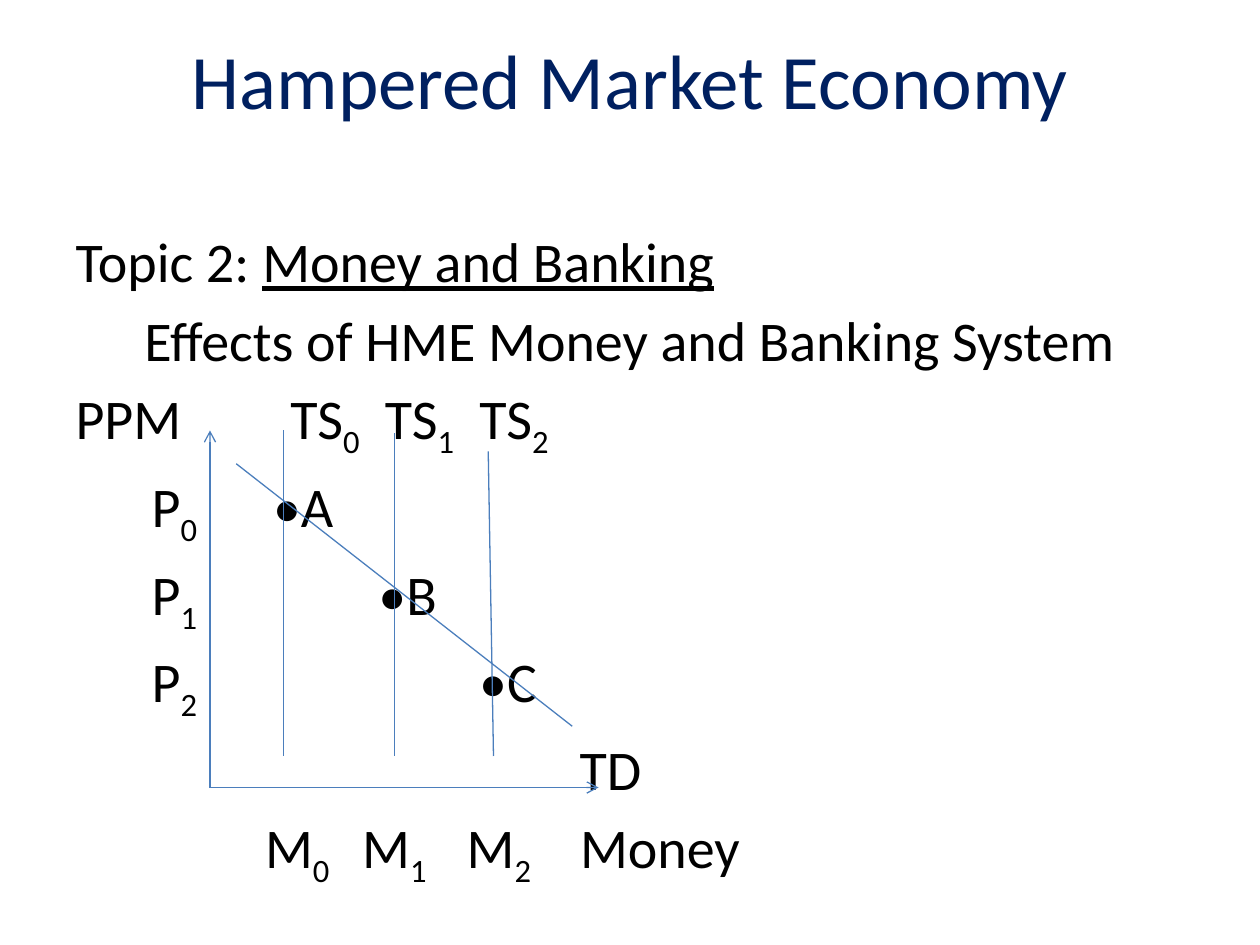
from dataclasses import dataclass

from lxml import etree
from pptx import Presentation
from pptx.dml.color import RGBColor
from pptx.enum.shapes import MSO_CONNECTOR
from pptx.enum.text import MSO_ANCHOR, MSO_AUTO_SIZE, PP_ALIGN
from pptx.oxml.ns import qn
from pptx.util import Pt

STRAIGHT = MSO_CONNECTOR.STRAIGHT
CENTER, LEFT = PP_ALIGN.CENTER, PP_ALIGN.LEFT
TOP, MIDDLE = MSO_ANCHOR.TOP, MSO_ANCHOR.MIDDLE
NO_AUTOFIT = MSO_AUTO_SIZE.NONE


@dataclass(frozen=True)
class Theme:
    font: str = "Calibri"
    title_size: float = 44
    body_size: float = 32
    space_width: float = 7.2
    line_width: float = 0.75
    title: RGBColor = RGBColor(0x00, 0x20, 0x60)
    text: RGBColor = RGBColor(0x00, 0x00, 0x00)
    line: RGBColor = RGBColor(0x4B, 0x7E, 0xBC)


theme = Theme()


def add_run(p, text, size=theme.body_size, color=theme.text):
    r = p.add_run()
    r.text = text
    r.font.name, r.font.size, r.font.color.rgb = theme.font, Pt(size), color
    return r


def add_line(s, x1, y1, x2, y2, arrow):
    c = s.shapes.add_connector(STRAIGHT, Pt(x1), Pt(y1), Pt(x2), Pt(y2))
    c.line.color.rgb = theme.line
    c.line.width = Pt(theme.line_width)
    if arrow:
        etree.SubElement(c.line._get_or_add_ln(), qn("a:tailEnd"), type="arrow")
    etree.SubElement(c._element.spPr, qn("a:effectLst"))


prs = Presentation()
prs.slide_width, prs.slide_height = Pt(720), Pt(540)
s = prs.slides.add_slide(prs.slide_layouts[1])

title = s.shapes.title
title.left, title.top, title.width, title.height = Pt(0), Pt(0), Pt(720), Pt(90)
title.text_frame.vertical_anchor = MIDDLE
p = title.text_frame.paragraphs[0]
p.alignment = CENTER
add_run(p, "Hampered Market Economy", theme.title_size, theme.title)

body = s.placeholders[1]
body.left, body.top, body.width, body.height = Pt(36), Pt(126), Pt(648), Pt(414)
tf = body.text_frame
tf.word_wrap = True
tf.auto_size = NO_AUTOFIT
tf.vertical_anchor = TOP

# Each row: alignment, then (gap before, label); "_" lowers the next character
rows = [
    (LEFT, [(0, "Topic 2: ")]),
    (CENTER, [(0, "Effects of HME Money and Banking System")]),
    (LEFT, [(0, "PPM"), (62.2, "TS_0"), (14.4, "TS_1"), (14.4, "TS_2")]),
    (LEFT, [(43.4, "P_0"), (43.4, "•A")]),
    (LEFT, [(43.4, "P_1"), (103.6, "•B")]),
    (LEFT, [(43.4, "P_2"), (161.2, "•C")]),
    (LEFT, [(288, "TD")]),
    (LEFT, [(108.2, "M_0"), (18.7, "M_1"), (22.9, "M_2"), (28, "Money")]),
]
for i, (align, labels) in enumerate(rows):
    p = tf.paragraphs[0] if i == 0 else tf.add_paragraph()
    p.alignment = align
    pPr = p._p.get_or_add_pPr()
    pPr.set("marL", "0")
    pPr.set("indent", "0")
    etree.SubElement(pPr, qn("a:buNone"))
    for gap, label in labels:
        if gap:
            # One space, widened to the gap by character spacing
            space = add_run(p, " ")
            spacing = round((gap - theme.space_width) * 100)
            space.font._element.set("spc", str(spacing))
        base, _, subscript = label.partition("_")
        add_run(p, base)
        if subscript:
            sub = add_run(p, subscript)
            sub.font._element.set("baseline", "-25000")

topic = add_run(tf.paragraphs[0], "Money and Banking")
topic.font.underline = True

origin_x, origin_y, supply_bottom = 120, 450, 432
lines = [
    (origin_x, origin_y, origin_x, 246, True),       # price axis
    (origin_x, origin_y, 342, origin_y, True),       # money axis
    (135, 265, 327, 415, False),                     # money demand
    (225.4, 247.5, 225.4, supply_bottom, False),     # money supply
    (162, 246, 162, supply_bottom, False),
    (279, 258, 282, supply_bottom, False),
]
for line in lines:
    add_line(s, *line)

prs.save("out.pptx")
